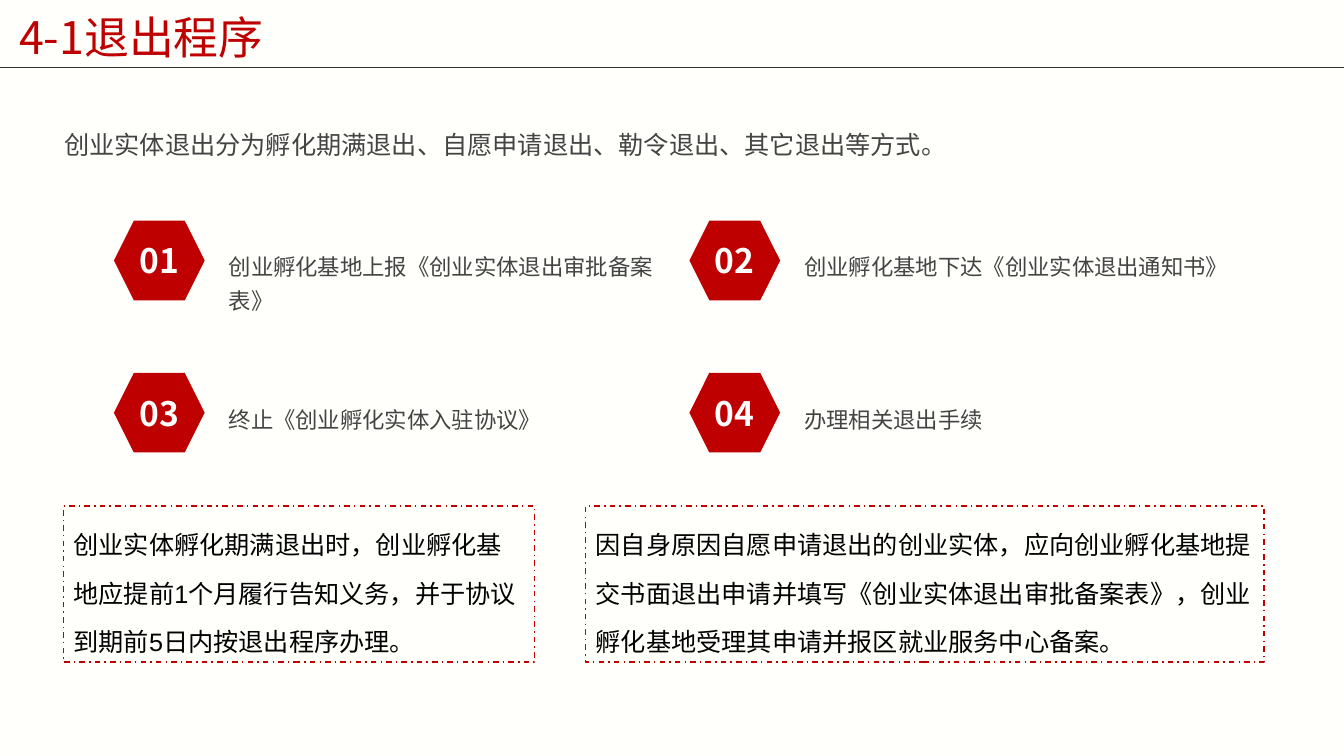
from lxml.etree import SubElement
from pptx import Presentation
from pptx.dml.color import RGBColor
from pptx.enum.dml import MSO_LINE
from pptx.enum.shapes import MSO_CONNECTOR, MSO_SHAPE
from pptx.enum.text import MSO_ANCHOR, MSO_AUTO_SIZE, PP_ALIGN
from pptx.oxml.ns import qn
from pptx.util import Inches, Pt

WIDTH, HEIGHT = Inches(13.333), Inches(7.5)
CJK_FONT = "Noto Sans CJK SC"
RED, GREY = "BE0100", "444444"

INTRO = "创业实体退出分为孵化期满退出、自愿申请退出、勒令退出、其它退出等方式。"
STEPS = [
    "创业孵化基地上报《创业实体退出审批备案表》",
    "创业孵化基地下达《创业实体退出通知书》",
    "终止《创业孵化实体入驻协议》",
    "办理相关退出手续",
]
# Left column, width in columns, wording
NOTES = [
    (4.73, 35.03, "创业实体孵化期满退出时，创业孵化基地应提前1个月履行告知义务，"
                  "并于协议到期前5日内按退出程序办理。"),
    (43.58, 50.48, "因自身原因自愿申请退出的创业实体，应向创业孵化基地提交书面退出申请"
                   "并填写《创业实体退出审批备案表》，创业孵化基地受理其申请并报区就业服务中心备案。"),
]


def color(hex_code):
    return RGBColor.from_string(hex_code)


def grid(left, top, width, height):
    """Turn a box on a grid of 100 columns by 100 rows into slide lengths."""
    return (round(WIDTH * left / 100), round(HEIGHT * top / 100),
            round(WIDTH * width / 100), round(HEIGHT * height / 100))


def write(shape, wording, size, hex_code, font=CJK_FONT, spacing=None,
          align=PP_ALIGN.LEFT, anchor=MSO_ANCHOR.TOP, bold=False):
    frame = shape.text_frame
    frame.word_wrap = True
    frame.vertical_anchor = anchor
    paragraph = frame.paragraphs[0]
    paragraph.alignment = align
    if spacing:
        paragraph.line_spacing = spacing
    run = paragraph.add_run()
    run.text = wording
    run.font.name = font
    run.font.size = Pt(size)
    run.font.bold = bold
    run.font.color.rgb = color(hex_code)
    SubElement(run.font._element, qn("a:ea"), typeface=CJK_FONT)


def add_label(slide, box, wording, size, hex_code, **style):
    label = slide.shapes.add_textbox(*grid(*box))
    write(label, wording, size, hex_code, **style)
    label.text_frame.auto_size = MSO_AUTO_SIZE.SHAPE_TO_FIT_TEXT


def add_header(slide, left, top, width, height):
    add_label(slide, (left + 0.68, top + 0.53, 43.2, height - 0.4),
              "4-1退出程序", 32, RED, anchor=MSO_ANCHOR.MIDDLE)
    x, y, span, drop = grid(left, top, width, height)
    rule = slide.shapes.add_connector(MSO_CONNECTOR.STRAIGHT, x, y + drop, x + span, y + drop)
    rule.line.color.rgb = color("333333")
    rule.line.width = Pt(0.5)
    SubElement(rule._element.spPr, qn("a:effectLst"))


def add_step(slide, left, top, width, number, wording):
    add_label(slide, (left + 7.8, top + 2.8, width - 7.8, 5.87),
              wording, 16, GREY, spacing=1.25)
    badge = slide.shapes.add_shape(MSO_SHAPE.HEXAGON, *grid(left, top, 6.75, 10.53))
    badge.shadow.inherit = False
    badge.fill.solid()
    badge.fill.fore_color.rgb = color(RED)
    badge.line.fill.background()
    write(badge, f"{number:02}", 24, "FFFFFF", align=PP_ALIGN.CENTER,
          anchor=MSO_ANCHOR.MIDDLE, bold=True)


def add_steps(slide, left, top, column_step, row_step):
    """Place the steps two to a row, numbered from the top left."""
    for index, wording in enumerate(STEPS):
        row, column = divmod(index, 2)
        add_step(slide, left + column * column_step, top + row * row_step,
                 42.08, index + 1, wording)


def add_note(slide, left, top, width, height, wording):
    note = slide.shapes.add_shape(MSO_SHAPE.RECTANGLE, *grid(left, top, width, height))
    note.shadow.inherit = False
    note.fill.background()
    note.line.color.rgb = color("C00000")
    note.line.width = Pt(1)
    note.line.dash_style = MSO_LINE.DASH_DOT
    write(note, wording, 18, "000000", font="Arial", spacing=1.6,
          anchor=MSO_ANCHOR.MIDDLE)


def main():
    deck = Presentation()
    deck.slide_width, deck.slide_height = WIDTH, HEIGHT
    slide = deck.slides.add_slide(deck.slide_layouts[6])
    slide.background.fill.solid()
    slide.background.fill.fore_color.rgb = color("FFFFFC")

    add_header(slide, 0, 0, 100, 8.93)
    add_label(slide, (4.05, 15.47, 90.08, 6.4), INTRO, 18, GREY, spacing=1.25)
    add_steps(slide, 8.48, 29.2, 42.82, 20.13)
    for left, width, wording in NOTES:
        add_note(slide, left, 66.93, width, 20.67, wording)
    deck.save("out.pptx")


if __name__ == "__main__":
    main()
